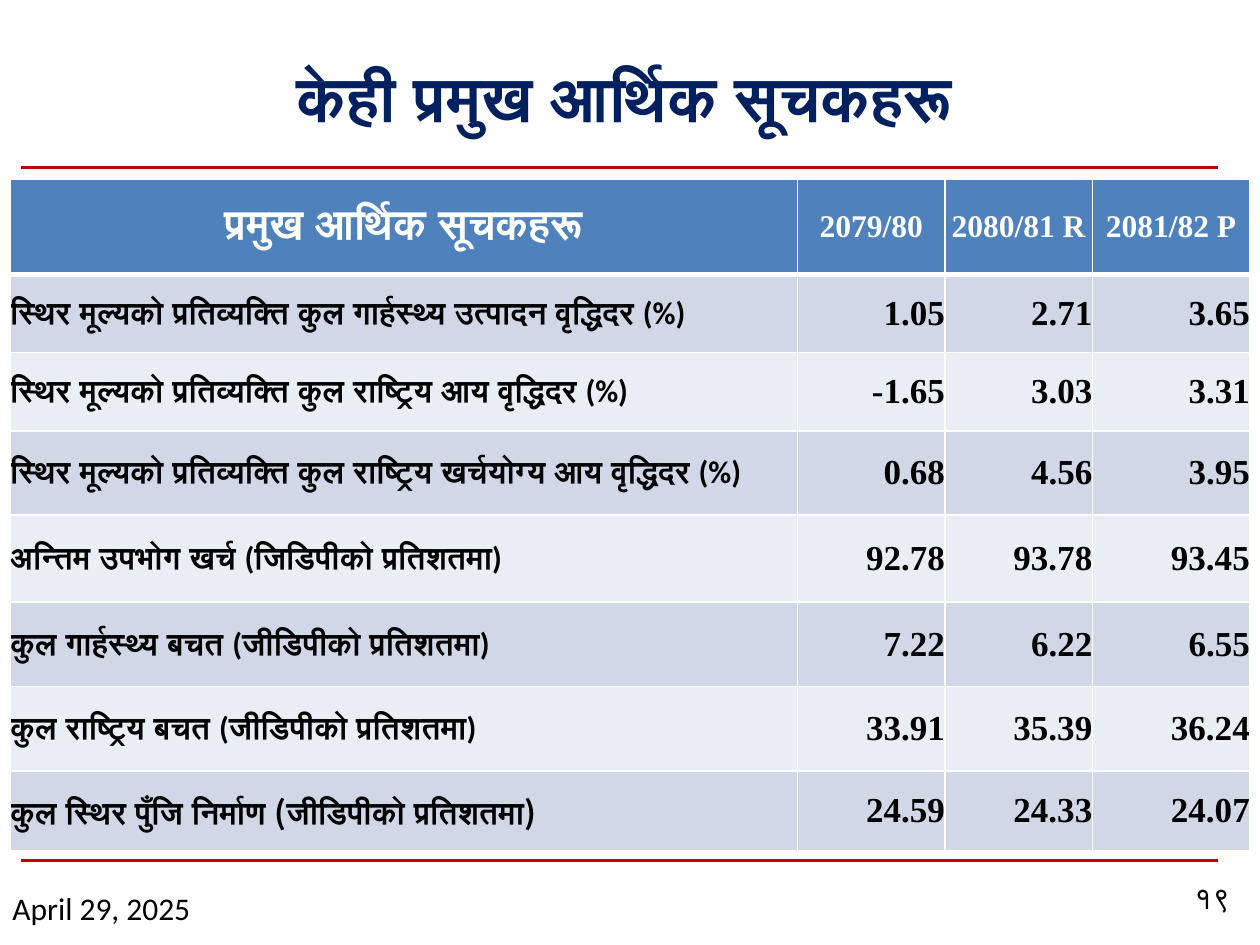
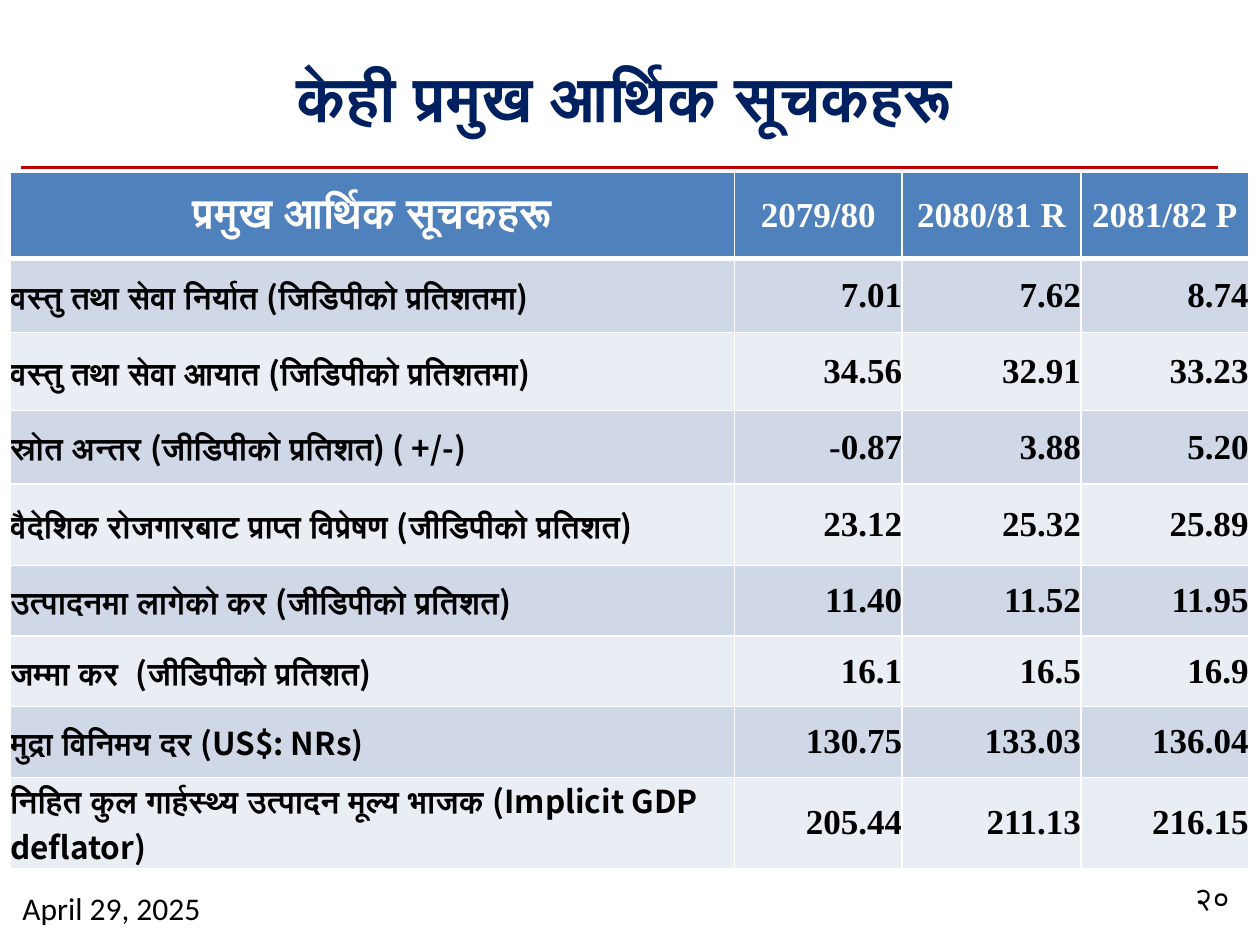
from dataclasses import dataclass
from lxml import etree
from pptx import Presentation
from pptx.dml.color import RGBColor
from pptx.enum.shapes import MSO_CONNECTOR
from pptx.enum.text import MSO_ANCHOR, MSO_AUTO_SIZE, PP_ALIGN
from pptx.oxml import parse_xml
from pptx.oxml.ns import nsdecls, qn
from pptx.util import Inches, Pt

STRAIGHT = MSO_CONNECTOR.STRAIGHT
MIDDLE = MSO_ANCHOR.MIDDLE
NO_FIT = MSO_AUTO_SIZE.NONE
LEFT, CENTER, RIGHT = PP_ALIGN.LEFT, PP_ALIGN.CENTER, PP_ALIGN.RIGHT


@dataclass(frozen=True)
class Theme:
    navy: str = "002060"
    red: str = "C00000"
    header: str = "4F81BD"
    bands: tuple = ("D0D8E8", "E9EDF4")
    white: str = "FFFFFF"
    black: str = "000000"
    sans: str = "Calibri"
    serif: str = "Times New Roman"
    wide: str = "Noto Sans CJK JP"
    number: str = "Arial"
    title_size: int = 36
    header_size: int = 24
    value_size: int = 20
    text_size: int = 18


theme = Theme()


def write(frame, text, font, size, color, align, bold=False):
    para = frame.paragraphs[0]
    para.alignment = align
    span = para.add_run()
    span.text = text
    span.font.name = font
    span.font.size = Pt(size)
    span.font.bold = bold
    span.font.color.rgb = RGBColor.from_string(color)


def style_cell(cell, fill, top, bottom):
    cell.margin_left = cell.margin_right = cell.margin_top = cell.margin_bottom = 0
    cell.vertical_anchor = MIDDLE
    cell.fill.solid()
    cell.fill.fore_color.rgb = RGBColor.from_string(fill)
    edges = (("lnL", 1), ("lnR", 1), ("lnT", top), ("lnB", bottom))
    for place, (edge, points) in enumerate(edges):
        border = parse_xml(
            f'<a:{edge} {nsdecls("a")} w="{Pt(points)}"><a:solidFill>'
            f'<a:srgbClr val="{theme.white}"/></a:solidFill></a:{edge}>'
        )
        cell._tc.get_or_add_tcPr().insert(place, border)


TITLE = "केही प्रमुख आर्थिक सूचकहरू"
HEADINGS = ["प्रमुख आर्थिक सूचकहरू", "2079/80", "2080/81 R", "2081/82 P"]
DATE = "April 29, 2025"

slides = [
    {
        "number": "१९",
        "date_left": 0,
        "table_top": 1.42,
        "year_size": theme.text_size,
        "widths": [6.25, 1.17, 1.17, 1.25],
        "heights": [0.76, 0.62, 0.62, 0.67, 0.69, 0.67, 0.67, 0.63],
        "rows": [
            (theme.sans, "स्थिर मूल्यको प्रतिव्यक्ति कुल गार्हस्थ्य उत्पादन वृद्धिदर (%)", "1.05", "2.71", "3.65"),
            (theme.sans, "स्थिर मूल्यको प्रतिव्यक्ति कुल राष्ट्रिय आय वृद्धिदर (%)", "-1.65", "3.03", "3.31"),
            (theme.sans, "स्थिर मूल्यको प्रतिव्यक्ति कुल राष्ट्रिय खर्चयोग्य आय वृद्धिदर (%)", "0.68", "4.56", "3.95"),
            (theme.sans, "अन्तिम उपभोग खर्च (जिडिपीको प्रतिशतमा)", "92.78", "93.78", "93.45"),
            (theme.sans, "कुल गार्हस्थ्य बचत (जीडिपीको प्रतिशतमा)", "7.22", "6.22", "6.55"),
            (theme.sans, "कुल राष्ट्रिय बचत (जीडिपीको प्रतिशतमा)", "33.91", "35.39", "36.24"),
            (theme.wide, "कुल स्थिर पुँजि निर्माण (जीडिपीको प्रतिशतमा)", "24.59", "24.33", "24.07"),
        ],
    },
    {
        "number": "२०",
        "date_left": 0.08,
        "table_top": 1.37,
        "year_size": theme.value_size,
        "widths": [5.75, 1.33, 1.42, 1.33],
        "heights": [0.68, 0.59, 0.62, 0.58, 0.65, 0.56, 0.56, 0.56, 0.62],
        "rows": [
            (theme.wide, "वस्तु तथा सेवा निर्यात (जिडिपीको प्रतिशतमा)", "7.01", "7.62", "8.74"),
            (theme.wide, "वस्तु तथा सेवा आयात (जिडिपीको प्रतिशतमा)", "34.56", "32.91", "33.23"),
            (theme.wide, "स्रोत अन्तर (जीडिपीको प्रतिशत) ( +/-)", "-0.87", "3.88", "5.20"),
            (theme.wide, "वैदेशिक रोजगारबाट प्राप्त विप्रेषण (जीडिपीको प्रतिशत)", "23.12", "25.32", "25.89"),
            (theme.wide, "उत्पादनमा लागेको कर (जीडिपीको प्रतिशत)", "11.40", "11.52", "11.95"),
            (theme.wide, "जम्मा कर  (जीडिपीको प्रतिशत)", "16.1", "16.5", "16.9"),
            (theme.wide, "मुद्रा विनिमय दर (US$: NRs)", "130.75", "133.03", "136.04"),
            (theme.wide, "निहित कुल गार्हस्थ्य उत्पादन मूल्य भाजक (Implicit GDP deflator)", "205.44", "211.13", "216.15"),
        ],
    },
]

deck = Presentation()
deck.slide_width = Inches(10)
deck.slide_height = Inches(7.5)
title_only = deck.slide_layouts[5]

for content in slides:
    page = deck.slides.add_slide(title_only)

    title = page.shapes.title
    title.left, title.top = Inches(0.08), Inches(0.25)
    title.width, title.height = Inches(9.75), Inches(1.03)
    title.text_frame.auto_size = NO_FIT
    title.text_frame.vertical_anchor = MIDDLE
    write(title.text_frame, TITLE, theme.sans, theme.title_size, theme.navy, CENTER, True)

    for rule_top in (1.33, 6.83):
        rule = page.shapes.add_connector(
            STRAIGHT, Inches(0.17), Inches(rule_top), Inches(9.67), Inches(rule_top)
        )
        rule.line.color.rgb = RGBColor.from_string(theme.red)
        rule.line.width = Pt(1.5)
        etree.SubElement(rule._element.spPr, qn("a:effectLst"))

    widths, heights = content["widths"], content["heights"]
    table = page.shapes.add_table(
        len(heights), len(widths), Inches(0.08), Inches(content["table_top"]),
        Inches(sum(widths)), Inches(sum(heights)),
    ).table
    for column, width in zip(table.columns, widths):
        column.width = Inches(width)
    for row, height in zip(table.rows, heights):
        row.height = Inches(height)

    for index, heading in enumerate(HEADINGS):
        cell = table.cell(0, index)
        style_cell(cell, theme.header, 1, 3)
        font = theme.serif if index else theme.sans
        size = content["year_size"] if index else theme.header_size
        write(cell.text_frame, heading, font, size, theme.white, CENTER, True)

    for row_index, (label_font, *texts) in enumerate(content["rows"], start=1):
        for index, text in enumerate(texts):
            cell = table.cell(row_index, index)
            style_cell(cell, theme.bands[(row_index - 1) % 2], 3 if row_index == 1 else 1, 1)
            font = theme.serif if index else label_font
            size = theme.value_size if index else theme.text_size
            write(cell.text_frame, text, font, size, theme.black, RIGHT if index else LEFT, True)

    footers = (
        (DATE, content["date_left"], 7.01, 2.17, 0.41, theme.sans, LEFT),
        (content["number"], 9.33, 6.92, 0.58, 0.48, theme.number, CENTER),
    )
    for text, left, top, width, height, font, align in footers:
        box = page.shapes.add_textbox(Inches(left), Inches(top), Inches(width), Inches(height))
        box.text_frame.word_wrap = True
        write(box.text_frame, text, font, theme.text_size, theme.black, align)

deck.save("out.pptx")
